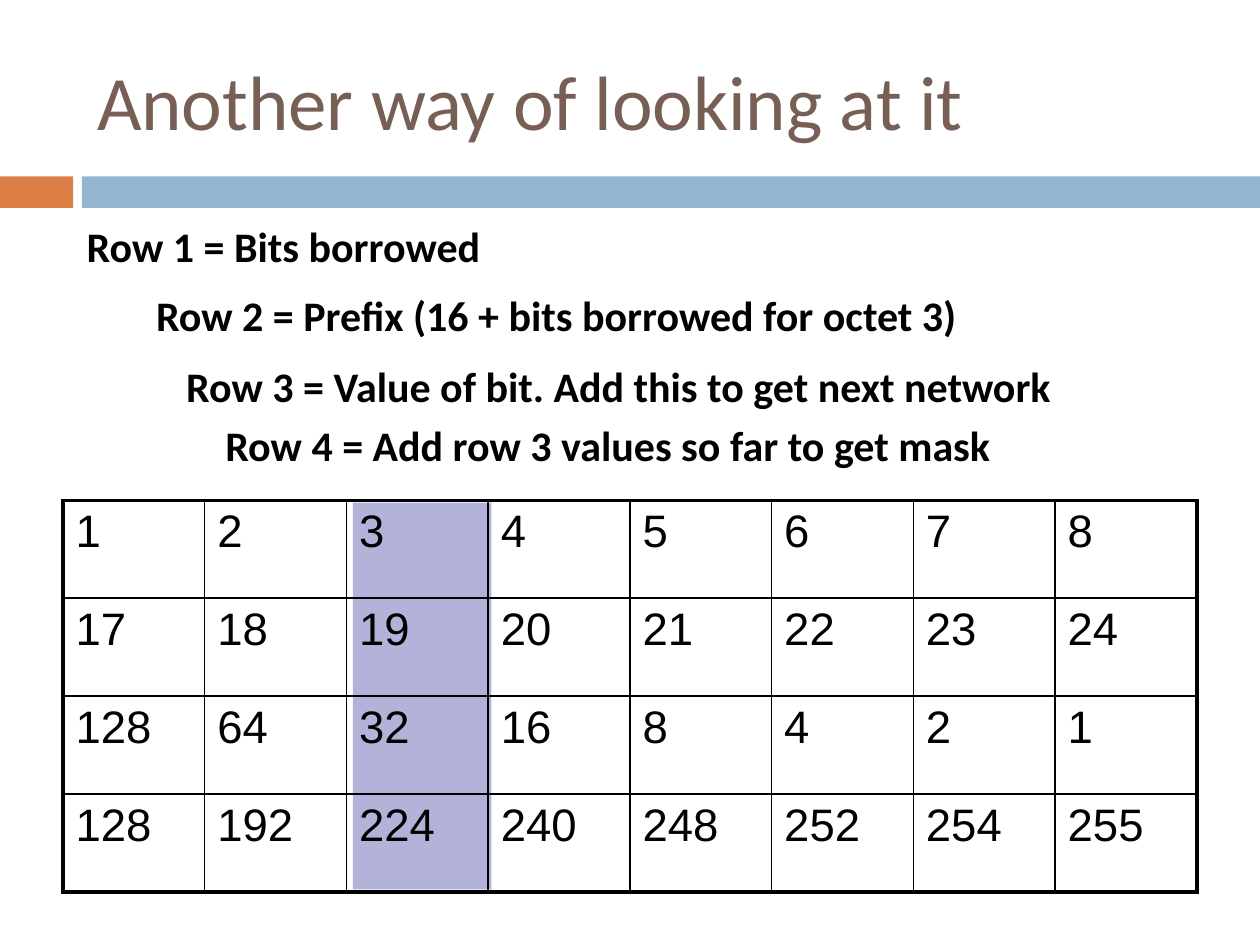
from pptx import Presentation
from pptx.dml.color import RGBColor
from pptx.enum.shapes import MSO_SHAPE
from pptx.enum.text import MSO_ANCHOR, PP_ALIGN
from pptx.oxml import parse_xml
from pptx.oxml.ns import nsdecls
from pptx.util import Inches, Pt

RECT = MSO_SHAPE.RECTANGLE
MIDDLE = MSO_ANCHOR.MIDDLE
LEFT = PP_ALIGN.LEFT

THEME = {
    "title": "775F55", "text": "000000", "accent": "DD8047",
    "band": "94B6D2", "highlight": "B3B3D9",
    "title_size": 44, "note_size": 24, "cell_size": 26,
    "heading_font": "Calibri", "cell_font": "Arial",
    "outer_line": 2.25, "inner_line": 1,
}


def write(tf, text, size, font=THEME["heading_font"], color=THEME["text"], bold=False):
    tf.word_wrap = True
    p = tf.paragraphs[0]
    p.alignment = LEFT
    r = p.add_run()
    r.text = text
    r.font.size = Pt(size)
    r.font.name = font
    r.font.bold = bold
    r.font.color.rgb = RGBColor.from_string(color)


prs = Presentation()
prs.slide_width, prs.slide_height = Inches(10), Inches(7.5)
s = prs.slides.add_slide(prs.slide_layouts[5])

BITS = 8
rows = [
    range(1, BITS + 1),
    range(17, 17 + BITS),
    [2 ** (BITS - i) for i in range(1, BITS + 1)],
    [256 - 2 ** (BITS - i) for i in range(1, BITS + 1)],
]
table_left, table_top, table_width, table_height = 0.5, 3.97, 9, 3.11
col_width = table_width / BITS

blocks = [
    (0, 1.4, 0.58, 0.25, THEME["accent"]),
    (0.65, 1.4, 9.35, 0.25, THEME["band"]),
    (table_left + 2 * col_width + 0.05, 3.99, 1.1, 3.07, THEME["highlight"]),
]
for left, top, width, height, color in blocks:
    sp = s.shapes.add_shape(RECT, Inches(left), Inches(top), Inches(width), Inches(height))
    sp.shadow.inherit = False
    sp.fill.solid()
    sp.fill.fore_color.rgb = RGBColor.from_string(color)
    sp.line.fill.background()

title = s.shapes.title
title.left, title.top = Inches(0.67), Inches(0.25)
title.width, title.height = Inches(8.92), Inches(1.08)
title.text_frame.vertical_anchor = MIDDLE
write(title.text_frame, "Another way of looking at it",
      size=THEME["title_size"], color=THEME["title"])

table = s.shapes.add_table(len(rows), BITS, Inches(table_left), Inches(table_top),
                           Inches(table_width), Inches(table_height)).table
table.first_row = table.horz_banding = False
for i, values in enumerate(rows):
    for j, value in enumerate(values):
        cell = table.cell(i, j)
        write(cell.text_frame, str(value), size=THEME["cell_size"], font=THEME["cell_font"])
        outer_edges = {"L": j == 0, "R": j == BITS - 1, "T": i == 0, "B": i == len(rows) - 1}
        for side, outer in outer_edges.items():
            width = Pt(THEME["outer_line" if outer else "inner_line"])
            cell._tc.get_or_add_tcPr().append(parse_xml(
                f'<a:ln{side} {nsdecls("a")} w="{width}"><a:solidFill>'
                f'<a:srgbClr val="{THEME["text"]}"/></a:solidFill></a:ln{side}>'))
        cell.fill.background()

notes = [
    (0.59, 1.7, 5.04, "Row 1 = Bits borrowed"),
    (1.14, 2.25, 7.95, "Row 2 = Prefix (16 + bits borrowed for octet 3)"),
    (1.38, 2.81, 8.27, "Row 3 = Value of bit. Add this to get next network"),
    (1.69, 3.28, 7.52, "Row 4 = Add row 3 values so far to get mask"),
]
for left, top, width, text in notes:
    sp = s.shapes.add_textbox(Inches(left), Inches(top), Inches(width), Inches(0.5))
    write(sp.text_frame, text, size=THEME["note_size"], bold=True)

prs.save("out.pptx")
